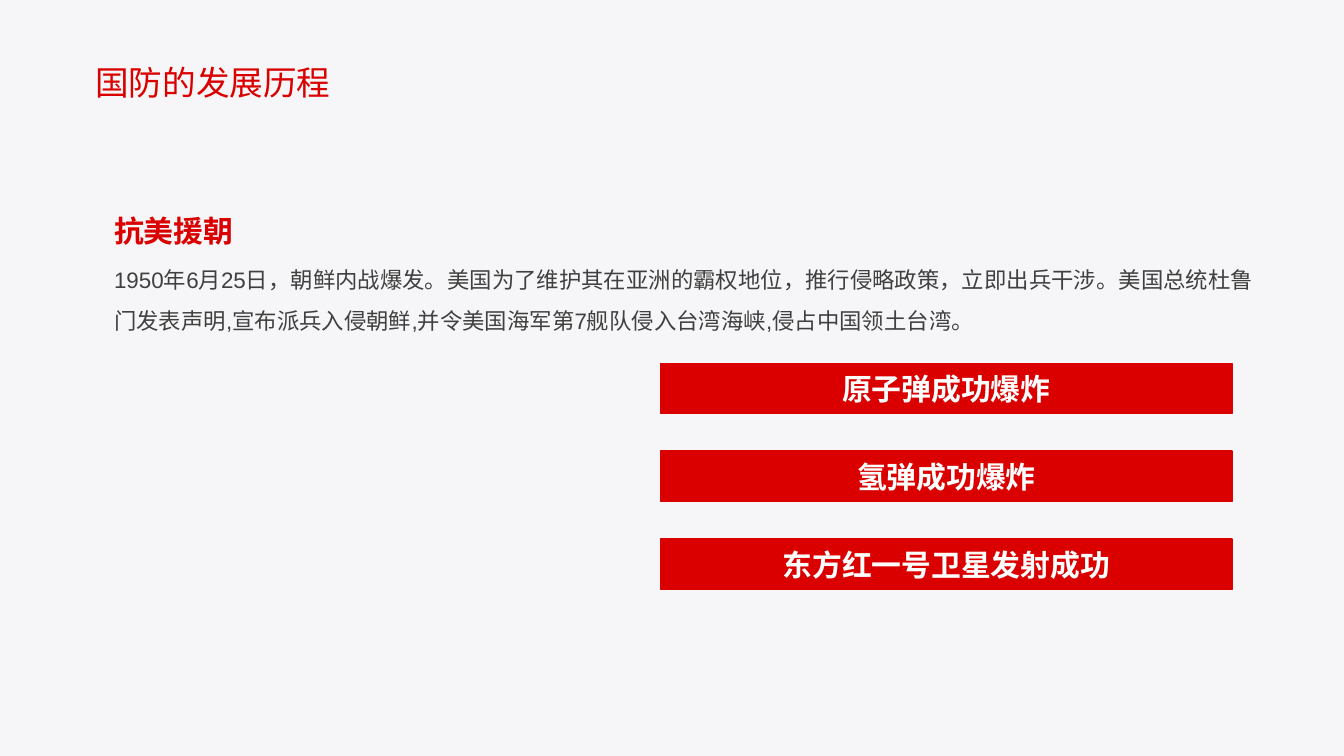
from pptx import Presentation
from pptx.dml.color import RGBColor
from pptx.enum.lang import MSO_LANGUAGE_ID
from pptx.enum.shapes import MSO_SHAPE
from pptx.enum.text import MSO_ANCHOR, PP_ALIGN
from pptx.oxml.ns import qn
from pptx.util import Pt
from lxml import etree

RECT = MSO_SHAPE.RECTANGLE
LEFT, CENTER = PP_ALIGN.LEFT, PP_ALIGN.CENTER
TOP, MIDDLE = MSO_ANCHOR.TOP, MSO_ANCHOR.MIDDLE
CHINESE = MSO_LANGUAGE_ID.SIMPLIFIED_CHINESE
COLORS = {"back": "F6F6F8", "red": "DA0000", "text": "404040", "white": "FFFFFF"}
BODY_FONT, HEAD_FONT = "Arial", "Noto Sans CJK SC"


def rgb(name):
    return RGBColor.from_string(COLORS[name])


def write(tf, text, size=16, color="red", font=HEAD_FONT, bold=False,
          align=LEFT, anchor=MIDDLE, spacing=None, wrap=True):
    tf.word_wrap = wrap
    tf.vertical_anchor = anchor
    p = tf.paragraphs[0]
    p.alignment = align
    if spacing:
        p.line_spacing = spacing
    r = p.add_run()
    r.text = text
    r.font.size = Pt(size)
    r.font.bold = bold
    r.font.name = font
    r.font.language_id = CHINESE
    r.font.color.rgb = rgb(color)
    latin = r.font._element.find(qn("a:latin"))
    ea = etree.Element(qn("a:ea"), typeface=font)
    latin.addnext(ea)


class Deck:
    """Holds the presentation and the current slide, and adds styled elements."""

    def __init__(self, width, height):
        self.prs = Presentation()
        self.prs.slide_width, self.prs.slide_height = Pt(width), Pt(height)
        self.s = self.prs.slides.add_slide(self.prs.slide_layouts[6])
        fill = self.s.background.fill
        fill.solid()
        fill.fore_color.rgb = rgb("back")

    def text(self, x, y, w, h, text, **style):
        sp = self.s.shapes.add_textbox(Pt(x), Pt(y), Pt(w), Pt(h))
        write(sp.text_frame, text, **style)

    def bar(self, x, y, w, h, text):
        sp = self.s.shapes.add_shape(RECT, Pt(x), Pt(y), Pt(w), Pt(h))
        sp.shadow.inherit = False
        sp.fill.solid()
        sp.fill.fore_color.rgb = rgb("red")
        sp.line.color.rgb = rgb("red")
        sp.line.width = Pt(0.75)
        write(sp.text_frame, text, color="white", bold=True, align=CENTER)


def main():
    deck = Deck(720, 405)
    deck.text(44, 29.5, 142, 29, "国防的发展历程", size=18, font=BODY_FONT,
              anchor=TOP, wrap=False)
    deck.text(54, 110, 240, 27, "抗美援朝", bold=True)
    deck.text(54, 132, 630, 51,
              "1950年6月25日，朝鲜内战爆发。美国为了维护其在亚洲的霸权地位，"
              "推行侵略政策，立即出兵干涉。美国总统杜鲁门发表声明,宣布派兵入侵朝鲜,"
              "并令美国海军第7舰队侵入台湾海峡,侵占中国领土台湾。",
              size=12, color="text", font=BODY_FONT, anchor=TOP, spacing=1.5)
    events = ["原子弹成功爆炸", "氢弹成功爆炸", "东方红一号卫星发射成功"]
    for i, event in enumerate(events):
        deck.bar(354, 194.6 + 47.1 * i, 306, 27, event)
    deck.prs.save("out.pptx")


if __name__ == "__main__":
    main()
